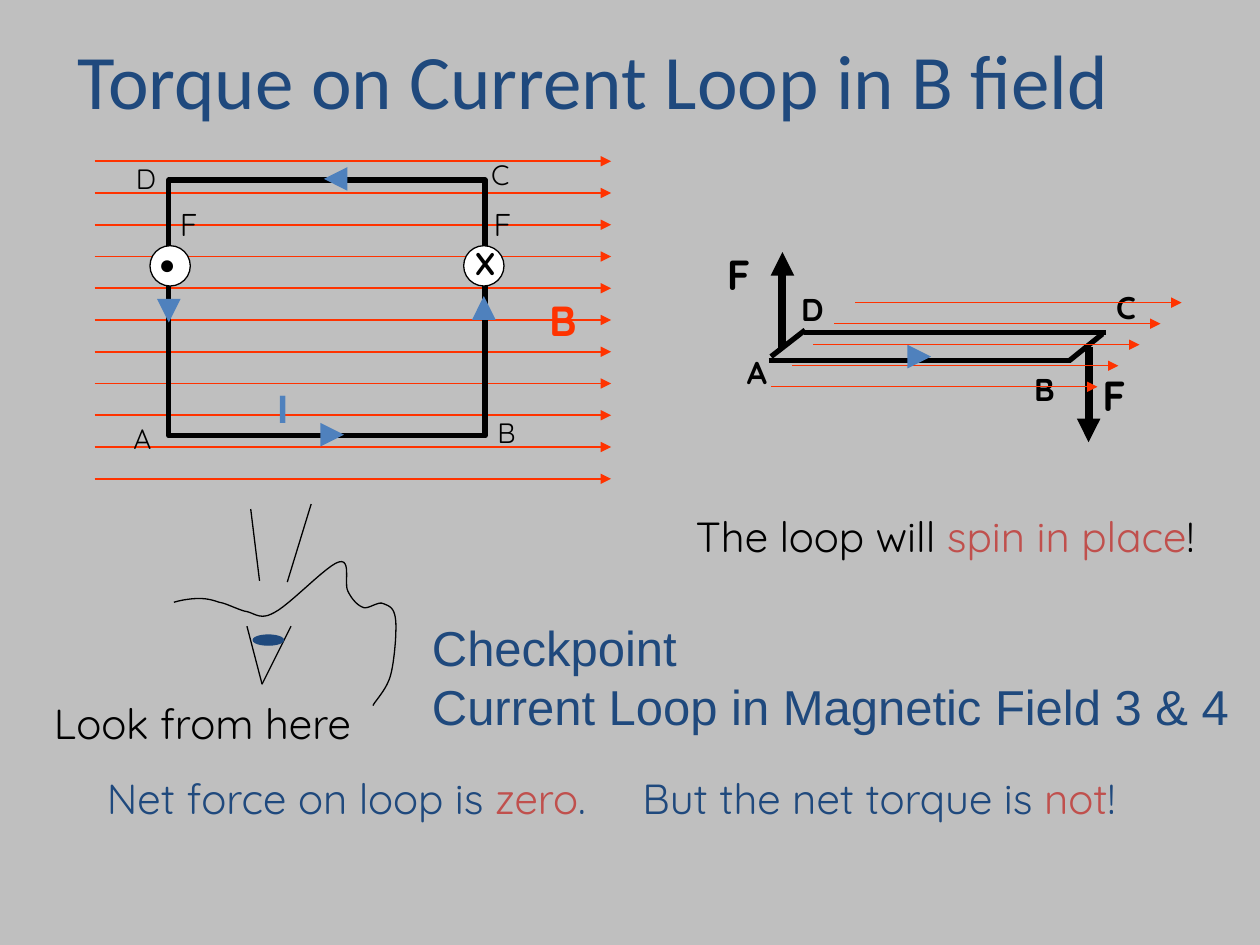
from typing import NamedTuple

from lxml.etree import SubElement
from pptx import Presentation
from pptx.dml.color import RGBColor
from pptx.enum.shapes import MSO_CONNECTOR as CONN, MSO_SHAPE as SHAPE
from pptx.enum.text import MSO_ANCHOR as ANCHOR, PP_ALIGN as ALIGN
from pptx.oxml.ns import qn
from pptx.util import Inches, Pt

BLACK, WHITE, GRAY = "000000", "FFFFFF", "BFBFBF"
NAVY, BLUE, RED, ORANGE = "1F497D", "4F81BD", "C0504D", "FF3300"


class Label(NamedTuple):
    text: str
    left: float
    top: float
    width: float
    height: float
    size: int
    color: str = BLACK
    bold: bool = False
    font: str = "Quicksand"


class Line(NamedTuple):
    x1: float
    y1: float
    x2: float
    y2: float
    width: float = 0.75
    color: str = BLACK
    arrow: bool = False


prs = Presentation()
prs.slide_width, prs.slide_height = Inches(10), Inches(7.5)
slide = prs.slides.add_slide(prs.slide_layouts[5])
shapes = slide.shapes


def rgb(color: str) -> RGBColor:
    return RGBColor.from_string(color)


def place(sp, left: float, top: float, width: float, height: float) -> None:
    sp.left, sp.top = Inches(left), Inches(top)
    sp.width, sp.height = Inches(width), Inches(height)


def write(sp, *paragraphs, size: int, font: str = "Quicksand", bold: bool = False,
          align=ALIGN.LEFT, anchor=ANCHOR.TOP) -> None:
    """Each paragraph is a list of (text, color) runs."""
    tf = sp.text_frame
    tf.word_wrap = True
    tf.vertical_anchor = anchor
    for i, runs in enumerate(paragraphs):
        p = tf.add_paragraph() if i else tf.paragraphs[0]
        p.alignment = align
        for text, color in runs:
            r = p.add_run()
            r.text = text
            r.font.size, r.font.name, r.font.bold = Pt(size), font, bold
            r.font.color.rgb = rgb(color)


def add_text(left: float, top: float, width: float, height: float, *paragraphs, **style) -> None:
    sp = shapes.add_textbox(0, 0, 0, 0)
    place(sp, left, top, width, height)
    write(sp, *paragraphs, **style)


def add_label(a: Label) -> None:
    add_text(a.left, a.top, a.width, a.height, [(a.text, a.color)],
             size=a.size, font=a.font, bold=a.bold)


def add_line(a: Line) -> None:
    ends = (Inches(v) for v in (a.x1, a.y1, a.x2, a.y2))
    cn = shapes.add_connector(CONN.STRAIGHT, *ends)
    cn.line.width = Pt(a.width)
    cn.line.color.rgb = rgb(a.color)
    if a.arrow:
        SubElement(cn.line._get_or_add_ln(), qn("a:tailEnd"), type="triangle")
    SubElement(cn._element.spPr, qn("a:effectLst"))


def outline(sp, fill: str | None, line: str, width: float) -> None:
    sp.shadow.inherit = False
    if fill:
        sp.fill.solid()
        sp.fill.fore_color.rgb = rgb(fill)
    else:
        sp.fill.background()
    sp.line.color.rgb = rgb(line)
    sp.line.width = Pt(width)


def add_shape(kind, left: float, top: float, width: float, height: float,
              fill: str | None = None, line: str = BLACK, weight: float = 0.75) -> None:
    sp = shapes.add_shape(kind, 0, 0, 0, 0)
    place(sp, left, top, width, height)
    outline(sp, fill, line, weight)


def add_curve(start: tuple, segments: list, steps: int = 12) -> None:
    """Draw a chain of cubic Bezier segments as a fine polyline."""
    points, p0 = [], start
    for x1, y1, x2, y2, x3, y3 in segments:
        for t in (i / steps for i in range(1, steps + 1)):
            weights = ((1 - t) ** 3, 3 * t * (1 - t) ** 2, 3 * t * t * (1 - t), t ** 3)
            xs, ys = (p0[0], x1, x2, x3), (p0[1], y1, y2, y3)
            points.append(tuple(Inches(sum(w * v for w, v in zip(weights, vs)))
                                for vs in (xs, ys)))
        p0 = (x3, y3)
    fb = shapes.build_freeform(Inches(start[0]), Inches(start[1]))
    fb.add_line_segments(points, close=False)
    outline(fb.convert_to_shape(), None, BLACK, 0.75)


# Background and title
slide.background.fill.solid()
slide.background.fill.fore_color.rgb = rgb(GRAY)
place(shapes.title, 0.25, 0, 8.92, 1.25)
write(shapes.title, [("Torque on Current Loop in B field", NAVY)],
      size=44, font="Calibri", align=ALIGN.CENTER, anchor=ANCHOR.MIDDLE)

# Observer: eye, profile and line of sight
for line in (Line(1.96, 4.97, 2.08, 5.43), Line(2.08, 5.43, 2.31, 4.97),
             Line(2.06, 4.61, 1.99, 4.04), Line(2.28, 4.62, 2.47, 4)):
    add_line(line)
add_shape(SHAPE.OVAL, 2.01, 5.04, 0.24, 0.08, NAVY, NAVY)
add_curve((1.38, 4.78), [
    (1.45, 4.76, 1.52, 4.75, 1.58, 4.75), (1.64, 4.75, 1.68, 4.76, 1.74, 4.78),
    (1.80, 4.79, 1.87, 4.83, 1.94, 4.85), (2.02, 4.86, 2.06, 4.93, 2.18, 4.86),
    (2.30, 4.80, 2.60, 4.48, 2.69, 4.46), (2.79, 4.43, 2.73, 4.63, 2.76, 4.69),
    (2.79, 4.75, 2.83, 4.80, 2.88, 4.82), (2.92, 4.84, 3.00, 4.77, 3.04, 4.79),
    (3.09, 4.81, 3.13, 4.82, 3.14, 4.92), (3.15, 5.01, 3.13, 5.25, 3.10, 5.36),
    (3.07, 5.47, 2.98, 5.56, 2.96, 5.60)])
add_label(Label("Look from here", 0.33, 5.49, 3.79, 0.5, 24))

# Top view: field lines, loop and current direction
for i in range(11):
    y = 1.28 + 0.252 * i
    add_line(Line(0.75, y, 4.85, y, 1, ORANGE, True))
add_shape(SHAPE.RECTANGLE, 1.34, 1.43, 2.51, 2.03, weight=3)
for ends in ((2.72, 1.42, 2.57, 1.42), (3.84, 2.54, 3.84, 2.35),
             (2.59, 3.45, 2.73, 3.45), (1.34, 2.37, 1.34, 2.56)):
    add_line(Line(*ends, 4.5, BLUE, True))
for x in (1.19, 3.68):
    add_shape(SHAPE.OVAL, x, 1.95, 0.32, 0.32, WHITE)
for label in (
        Label("A", 0.96, 3.3, 0.56, 0.37, 16), Label("B", 3.85, 3.25, 0.5, 0.37, 16),
        Label("C", 3.8, 1.2, 0.41, 0.37, 16), Label("D", 0.98, 1.23, 0.45, 0.37, 16),
        Label("B", 4.26, 2.29, 0.68, 0.5, 24, ORANGE, True),
        Label("I", 2.1, 2.98, 0.31, 0.5, 24, BLUE, True, "Calibri"),
        Label("X", 3.67, 1.89, 0.43, 0.4, 18, bold=True),
        Label("•", 1.17, 1.85, 0.43, 0.5, 24, bold=True),
        Label("F", 3.82, 1.58, 0.51, 0.43, 18), Label("F", 1.33, 1.58, 0.51, 0.43, 18)):
    add_label(label)

# Side view: loop, forces, labels and field lines
for ends in ((6.1, 2.86, 8.5, 2.86), (6.38, 2.64, 8.78, 2.64),
             (8.49, 2.86, 8.75, 2.65), (6.12, 2.83, 6.39, 2.62)):
    add_line(Line(*ends, 3))
for ends in ((8.64, 2.75, 8.64, 3.51), (6.21, 2.76, 6.21, 2)):
    add_line(Line(*ends, 4.5, BLACK, True))
for text, left, top in (("A", 5.83, 2.75), ("B", 8.11, 2.89), ("C", 8.76, 2.24), ("D", 6.26, 2.25)):
    add_label(Label(text, left, top, 0.5, 0.4, 18, bold=True))
for left, top in ((8.65, 2.88), (5.67, 1.92)):
    add_label(Label("F", left, top, 0.64, 0.5, 24, bold=True))
for i in range(5):
    x, y = 6.12 + 0.167 * i, 3.07 - 0.167 * i
    add_line(Line(x, y, x + 2.59, y, 0.75, ORANGE, True))
add_line(Line(7.25, 2.83, 7.39, 2.83, 4.5, BLUE, True))

# Conclusions and checkpoint
add_text(5.25, 4, 4.5, 0.5, [("The loop will ", BLACK), ("spin in place", RED), ("!", BLACK)],
         size=24, align=ALIGN.CENTER)
add_text(0.75, 6.08, 4.42, 0.5, [("Net force on loop is ", NAVY), ("zero", RED), (".", NAVY)], size=24)
add_text(5, 6.08, 4.42, 0.5, [("But the net torque is ", NAVY), ("not", RED), ("!", NAVY)], size=24)
add_text(3.33, 4.74, 6.67, 1.25, [("Checkpoint", NAVY)],
         [("Current Loop in Magnetic Field 3 & 4", NAVY)],
         size=28, font="Arial", anchor=ANCHOR.MIDDLE)

prs.save("out.pptx")
